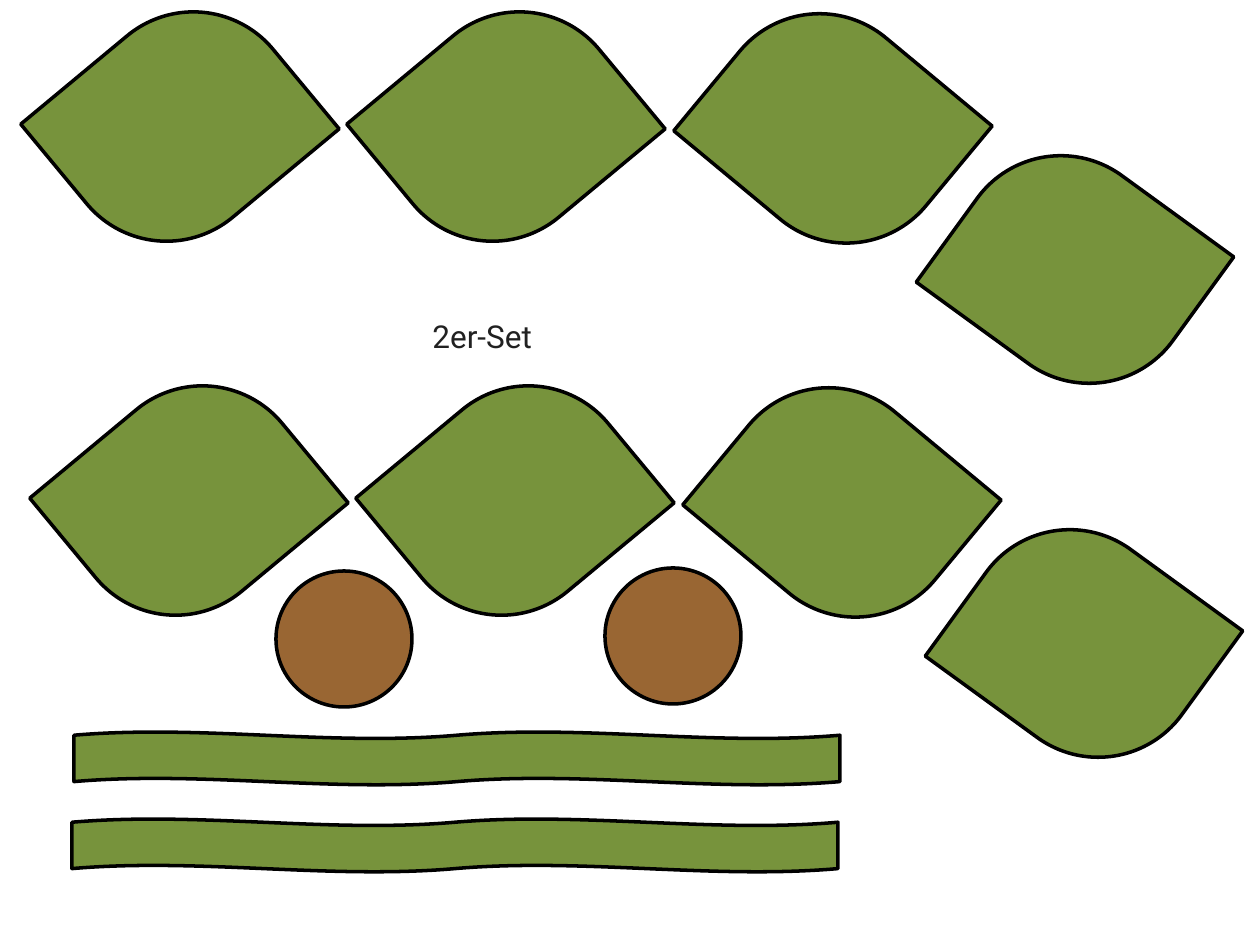
from pptx import Presentation
from pptx.dml.color import RGBColor
from pptx.enum.shapes import MSO_SHAPE
from pptx.enum.text import MSO_AUTO_SIZE
from pptx.util import Emu, Pt

PX_PER_INCH = 126
GREEN = RGBColor(0x77, 0x93, 0x3C)
BROWN = RGBColor(0x99, 0x66, 0x33)
BLACK = RGBColor(0x00, 0x00, 0x00)
DARK_GREY = RGBColor(0x21, 0x21, 0x21)

# left, top, rotation, mirrored
LEAVES = [
    (59, 23, 320.3, False),
    (385, 23, 320.3, False),
    (712, 25, 39.7, True),
    (954, 166, 36, True),
]
SECOND_BRANCH_OFFSET = (9, 374)


def px(length):
    return Emu(round(length * 914400 / PX_PER_INCH))


class CraftSheet:
    """Draws outlined cut-out pieces on one slide."""

    def __init__(self, slide):
        self.slide = slide

    def piece(self, kind, left, top, width, height, fill, shapes=None):
        shapes = shapes or self.slide.shapes
        shape = shapes.add_shape(kind, px(left), px(top), px(width), px(height))
        shape.shadow.inherit = False
        shape.fill.solid()
        shape.fill.fore_color.rgb = fill
        shape.line.color.rgb = BLACK
        shape.line.width = Pt(2)
        return shape

    def branch(self, dx=0, dy=0):
        """Groups four leaves, shifted together by dx and dy."""
        group = self.slide.shapes.add_group_shape()
        for left, top, rotation, mirrored in LEAVES:
            leaf = self.piece(MSO_SHAPE.ROUND_2_DIAG_RECTANGLE, left + dx, top + dy,
                              242, 207, GREEN, group.shapes)
            leaf.adjustments[0] = 0
            leaf.adjustments[1] = 0.5
            leaf.rotation = rotation
            if mirrored:
                leaf._element.spPr.xfrm.set("flipV", "1")

    def stem(self, left, top):
        self.piece(MSO_SHAPE.DOUBLE_WAVE, left, top, 766, 53, GREEN)

    def nut(self, left, top):
        self.piece(MSO_SHAPE.OVAL, left, top, 136, 136, BROWN)

    def label(self, text, left, top, width, height):
        frame = self.slide.shapes.add_textbox(px(left), px(top), px(width), px(height)).text_frame
        frame.word_wrap = True
        frame.auto_size = MSO_AUTO_SIZE.SHAPE_TO_FIT_TEXT
        paragraph = frame.paragraphs[0]
        paragraph.text = text
        paragraph.font.name = "Roboto"
        paragraph.font.size = Pt(18)
        paragraph.font.color.rgb = DARK_GREY


def main():
    presentation = Presentation()
    presentation.slide_width = px(1260)
    presentation.slide_height = px(945)
    blank_layout = presentation.slide_layouts[6]
    sheet = CraftSheet(presentation.slides.add_slide(blank_layout))

    sheet.branch()
    sheet.stem(74, 732)
    sheet.stem(72, 819)
    sheet.label("2er-Set", 420, 311, 410, 51)
    sheet.branch(*SECOND_BRANCH_OFFSET)
    sheet.nut(276, 571)
    sheet.nut(605, 568)

    presentation.save("out.pptx")


if __name__ == "__main__":
    main()
